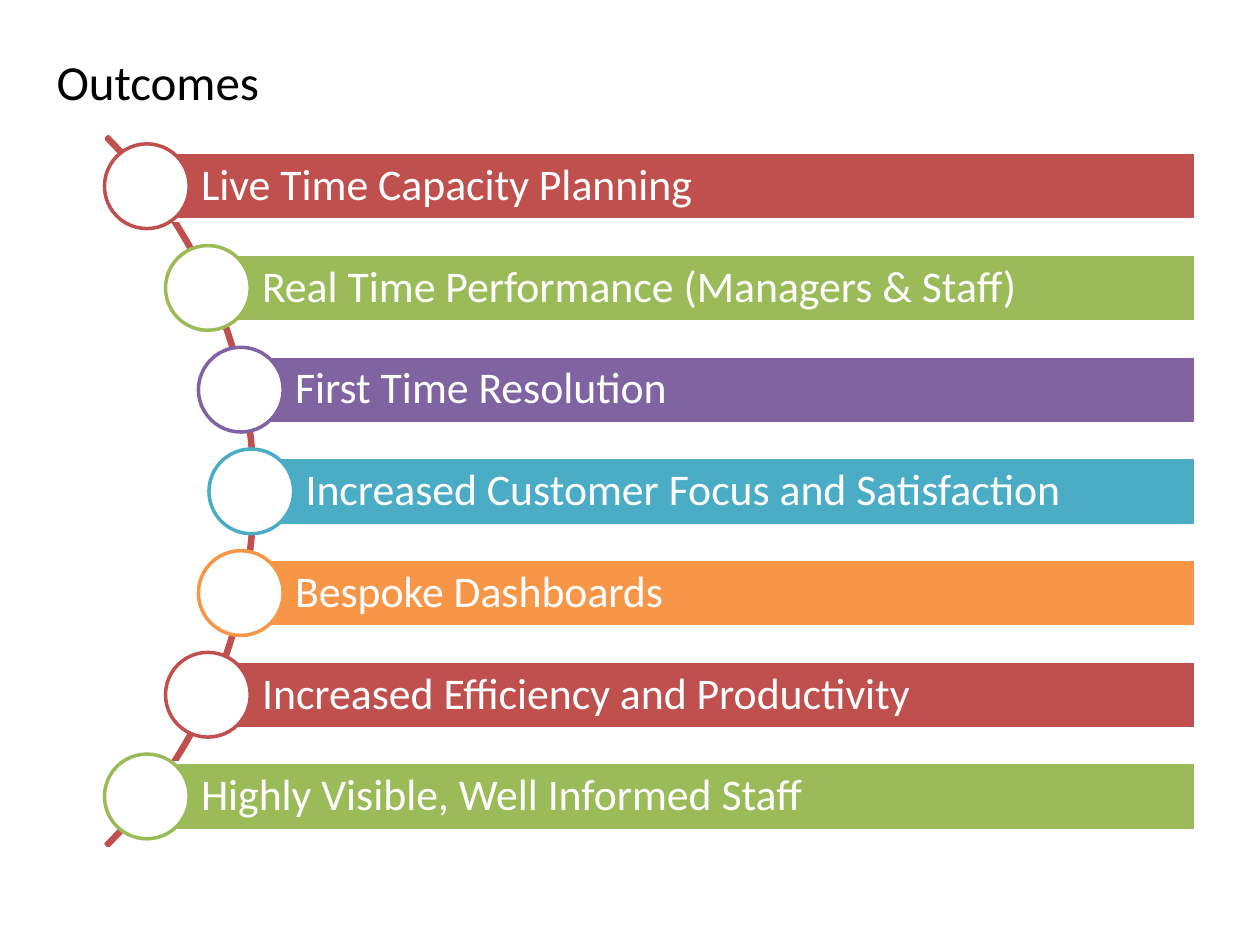
"""Build the Outcomes slide: seven labelled bars fanned along an arc."""
from math import sqrt

from pptx import Presentation
from pptx import util as u
from pptx.dml.color import RGBColor
from pptx.enum import shapes, text

COLOURS = {
    "red": "C0504D", "green": "9BBB59", "purple": "8064A2", "blue": "4BACC6",
    "orange": "F79646", "white": "FFFFFF", "black": "000000",
}
OUTCOMES = [
    ("Live Time Capacity Planning", "red"),
    ("Real Time Performance (Managers & Staff)", "green"),
    ("First Time Resolution", "purple"),
    ("Increased Customer Focus and Satisfaction", "blue"),
    ("Bespoke Dashboards", "orange"),
    ("Increased Efficiency and Productivity", "red"),
    ("Highly Visible, Well Informed Staff", "green"),
]
WIDTH, HEIGHT = 10, 7.5
ARC_X, ARC_Y = -0.1955 * WIDTH, 0.52 * HEIGHT
ARC_RADIUS, FAN_RADIUS = 3.98, 3.95
ROW = 5.65 / len(OUTCOMES)
BAR_HEIGHT = ROW * 2 / 3
CIRCLE = BAR_HEIGHT * 1.25
BAR_RIGHT = 0.949 * WIDTH


def colour(name):
    """Return the named colour."""
    return RGBColor.from_string(COLOURS[name])


def add_shape(page, kind, left, top, width, height, line, fill=None):
    """Add a flat preset shape with a two-point outline."""
    shape = page.shapes.add_shape(kind, *map(u.Inches, (left, top, width, height)))
    shape.shadow.inherit = False
    shape.line.color.rgb = colour(line)
    shape.line.width = u.Pt(2)
    if fill:
        shape.fill.solid()
        shape.fill.fore_color.rgb = colour(fill)
    else:
        shape.fill.background()
    return shape


def write(box, words, size, ink, spacing=1.0, anchor=text.MSO_ANCHOR.TOP,
          insets=(0.1, 0.05, 0.1, 0.05)):
    """Write one left-aligned paragraph into a box."""
    frame = box.text_frame
    frame.word_wrap = True
    frame.vertical_anchor = anchor
    (frame.margin_left, frame.margin_top,
     frame.margin_right, frame.margin_bottom) = map(u.Inches, insets)
    para = frame.paragraphs[0]
    para.alignment = text.PP_ALIGN.LEFT
    para.line_spacing = spacing
    span = para.add_run()
    span.text = words
    span.font.name = "Calibri"
    span.font.size = u.Pt(size)
    span.font.color.rgb = colour(ink)


def add_title(page, words):
    """Add the slide heading."""
    box = page.shapes.add_textbox(*map(u.Inches, (0.35, 0.36, 4.88, 0.57)))
    write(box, words, 28, "black")


def add_arc(page):
    """Add the quarter arc that carries the circles."""
    arc = add_shape(page, shapes.MSO_SHAPE.BLOCK_ARC, ARC_X - ARC_RADIUS,
                    ARC_Y - ARC_RADIUS, 2 * ARC_RADIUS, 2 * ARC_RADIUS, "red")
    for index, value in enumerate((189, 27, 0.003)):
        arc.adjustments[index] = value


def add_outcome(page, row, words, accent):
    """Add one bar and the circle at its left end."""
    offset = (row - (len(OUTCOMES) - 1) / 2) * ROW
    x, y = ARC_X + sqrt(FAN_RADIUS ** 2 - offset ** 2), ARC_Y + offset
    bar = add_shape(page, shapes.MSO_SHAPE.RECTANGLE, x, y - BAR_HEIGHT / 2,
                    BAR_RIGHT - x, BAR_HEIGHT, "white", accent)
    write(bar, words, 25, "white", spacing=0.9, anchor=text.MSO_ANCHOR.MIDDLE,
          insets=(0.43, 0.07, 0.07, 0.07))
    add_shape(page, shapes.MSO_SHAPE.OVAL, x - CIRCLE / 2, y - CIRCLE / 2,
              CIRCLE, CIRCLE, accent, "white")


def main():
    """Build and save the deck."""
    deck = Presentation()
    deck.slide_width, deck.slide_height = u.Inches(WIDTH), u.Inches(HEIGHT)
    page = deck.slides.add_slide(deck.slide_layouts[6])
    add_arc(page)
    for row, (words, accent) in enumerate(OUTCOMES):
        add_outcome(page, row, words, accent)
    add_title(page, "Outcomes")
    deck.save("out.pptx")


if __name__ == "__main__":
    main()
